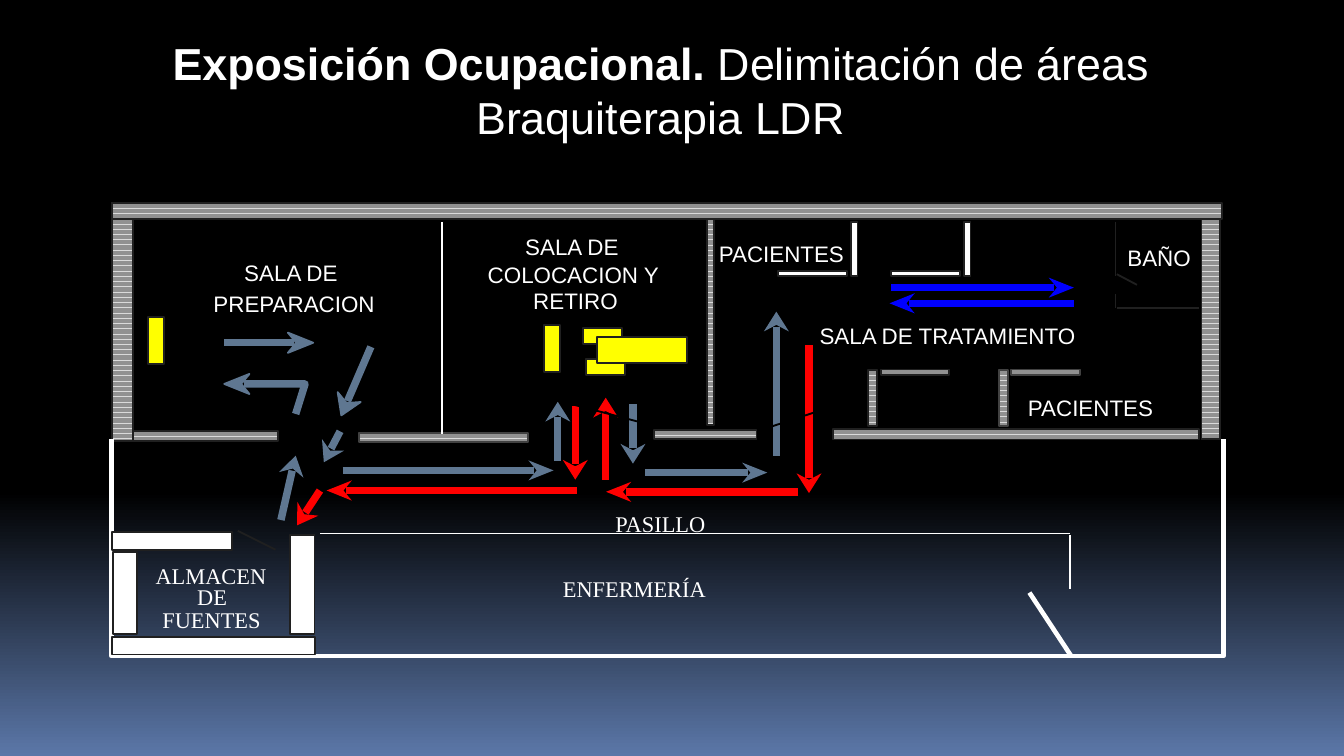
import dataclasses
import math

import pptx
import pptx.dml.color
import pptx.enum.dml
import pptx.enum.shapes
import pptx.enum.text
import pptx.oxml
import pptx.util

Pt = pptx.util.Pt


@dataclasses.dataclass(frozen=True)
class Theme:
    white: str = "FFFFFF"
    black: str = "000000"
    edge: str = "202020"
    rim: str = "414141"
    light: str = "DADADA"
    mid: str = "919191"
    steel: str = "5F7791"
    blue: str = "0000FF"
    red: str = "FF0000"
    yellow: str = "FFFF00"
    sky: str = "5B77A8"
    sans: str = "Arial"
    serif: str = "Times New Roman"
    title: int = 24
    label: int = 12
    thin: float = 1
    bold: float = 2.5
    route: float = 4


@dataclasses.dataclass(frozen=True)
class Box:
    x: float
    y: float
    w: float
    h: float

    def at(self, x, y):
        return Pt(self.x + x), Pt(self.y + y)


T = Theme()


def rgb(code):
    return pptx.dml.color.RGBColor.from_string(code)


def stroke(shape, color, width):
    shape.line.color.rgb = rgb(color)
    shape.line.width = Pt(width)


def block(slide, box, part, fill=None, edge=T.edge):
    """Draw a rectangle; without a fill colour it is a hatched wall."""
    x, y, w, h = part
    shape = slide.shapes.add_shape(
        pptx.enum.shapes.MSO_SHAPE.RECTANGLE, *box.at(x, y), Pt(w), Pt(h))
    shape.shadow.inherit = False
    if fill:
        shape.fill.solid()
        shape.fill.fore_color.rgb = rgb(fill)
    else:
        shape.fill.patterned()
        shape.fill.pattern = pptx.enum.dml.MSO_PATTERN.HORIZONTAL
        shape.fill.fore_color.rgb = rgb(T.light)
        shape.fill.back_color.rgb = rgb(T.mid)
    stroke(shape, edge, T.thin)


def line(slide, box, start, end, color, width=T.thin):
    link = slide.shapes.add_connector(
        pptx.enum.shapes.MSO_CONNECTOR.STRAIGHT, *box.at(*start), *box.at(*end))
    stroke(link, color, width)
    link._element.spPr.append(pptx.oxml.parse_xml(
        '<a:effectLst xmlns:a="http://schemas.openxmlformats.org/drawingml/2006/main"/>'))


def path(slide, box, points, close=False):
    pen = slide.shapes.build_freeform(*box.at(*points[0]))
    pen.add_line_segments([box.at(*p) for p in points[1:]], close=close)
    shape = pen.convert_to_shape()
    shape.shadow.inherit = False
    shape.fill.background()
    return shape


def arrow(slide, box, points, color, rim=False):
    """Draw a shaft through the points and a barbed head at the last one."""
    (ax, ay), (bx, by) = points[-2:]
    span = math.hypot(bx - ax, by - ay)
    ux, uy = (bx - ax) / span, (by - ay) / span
    size, half = (13.5, 5.4) if abs(ux) > abs(uy) else (10.6, 6.7)

    def spot(back, side):
        return bx - back * ux - side * uy, by - back * uy + side * ux

    shaft = [*points[:-1], spot(0.78 * size, 0)]
    if len(shaft) == 2:
        line(slide, box, *shaft, color, T.route)
    else:
        stroke(path(slide, box, shaft), color, T.route)
    barb = [spot(size, half), (bx, by), spot(size, -half), spot(0.67 * size, 0)]
    head = path(slide, box, barb, close=True)
    head.fill.solid()
    head.fill.fore_color.rgb = rgb(color)
    if rim:
        stroke(head, color, T.thin)
    else:
        head.line.fill.background()


def text(slide, box, runs, font, size, wrap=False):
    shape = slide.shapes.add_textbox(*box.at(0, 0), Pt(box.w), Pt(box.h))
    frame = shape.text_frame
    frame.word_wrap = wrap
    frame.auto_size = pptx.enum.text.MSO_AUTO_SIZE.SHAPE_TO_FIT_TEXT
    para = frame.paragraphs[0]
    for words, bold in runs:
        run = para.add_run()
        run.text = words
        run.font.name, run.font.size, run.font.bold = font, Pt(size), bold
        run.font.color.rgb = rgb(T.white)
    return frame


def title(slide, box):
    runs = [("Exposición Ocupacional.", True),
            (" Delimitación de áreas Braquiterapia LDR", False)]
    frame = text(slide, box, runs, T.sans, T.title, wrap=True)
    frame.vertical_anchor = pptx.enum.text.MSO_ANCHOR.MIDDLE
    frame.paragraphs[0].alignment = pptx.enum.text.PP_ALIGN.CENTER


def walls(slide, box):
    for part in [(7.7, 123.1, 81.4, 5), (0, 0.7, 11.5, 127.4),
                 (583.7, 0.7, 10.1, 126.7), (318.7, 0.7, 3.6, 118.8),
                 (0, 0.7, box.w - 1.3, 8.6), (386.4, 121.7, 195.8, 5.8),
                 (290.6, 122.4, 54.7, 5)]:
        block(slide, box, part)
    block(slide, box, (132.2, 123.8, 90.7, 5), edge=T.rim)
    for x, edge in [(405.1, T.edge), (475, T.rim)]:
        block(slide, box, (x, 90, 5, 30.2), edge=edge)
        block(slide, box, (x + 6.8, 90, 36.7, 2.9), edge=edge)
    for x in (356.9, 417.4):
        block(slide, box, (x + 38.9, 11, 3.6, 29), T.white)
        block(slide, box, (x, 37, 36.7, 2.9), T.white)
    line(slide, box, (176.9, 10.8), (176.9, 124.6), T.white)
    for start, end in [((582.2, 56.9), (538.3, 56.9)), ((537.6, 10.8), (537.6, 39.6)),
                       ((537.6, 56.9), (537.6, 49.7)), ((538.3, 38.9), (549.1, 44.6))]:
        line(slide, box, start, end, T.edge)


def hall(slide, box):
    """Draw the corridor outline, the source store and the nursing room."""
    right, low = box.w - 0.6, box.h - 0.5
    outline = path(slide, box, [(-0.3, 127.4), (-0.3, low), (right, low), (right, 127.4)])
    stroke(outline, T.white, T.bold)
    for part in [(0, 233.3, 108.7, 9.4), (0.5, 187.9, 13, 43.9),
                 (95.5, 178.6, 13, 53.3), (0, 177.1, 64.1, 9.4)]:
        block(slide, box, part, T.white)
    line(slide, box, (111.4, 177.8), (513.1, 177.8), T.white)
    line(slide, box, (513.1, 178.6), (513.1, 207.4), T.white)
    line(slide, box, (67.4, 176.4), (87.6, 186.5), T.edge)


def labels(slide, box):
    rooms = {
        T.serif: [("ALMACEN", 16.3, 189.4, 77), ("DE", 38.6, 200.9, 31),
                  ("FUENTES", 19.9, 213.1, 68), ("PASILLO", 262.6, 162, 64),
                  ("ENFERMERÍA", 234.5, 196.6, 92)],
        T.sans: [("SALA DE", 63.8, 27.2, 66), ("PREPARACION", 47.3, 43.9, 102),
                 ("SALA DE", 214.3, 13.5, 66), ("COLOCACION Y", 194.2, 28.6, 108),
                 ("RETIRO", 218.6, 42.5, 61), ("PACIENTES", 318, 17.3, 82),
                 ("PACIENTES", 483.6, 99.4, 82), ("BAÑO", 536.9, 19.4, 49),
                 ("SALA DE TRATAMIENTO", 372, 61.2, 153)],
    }
    for font, items in rooms.items():
        for words, x, y, w in items:
            spot = Box(box.x + x, box.y + y, w, 21.6)
            text(slide, spot, [(words, False)], font, T.label)


def tables(slide, box):
    for part in [(253.9, 84.2, 20.9, 8.6), (252.5, 67.7, 20.9, 8.6),
                 (259.7, 72.7, 48.2, 13.7), (231.6, 66.2, 8.6, 25.2),
                 (19.2, 61.9, 8.6, 25.2)]:
        block(slide, box, part, T.yellow)


def routes(slide, box):
    for points in [[(98.4, 113.8), (103.4, 97.7), (60.2, 97.7)],
                   [(60.2, 75.6), (107.8, 75.6)], [(138.7, 77.8), (122.9, 114.5)]]:
        arrow(slide, box, points, T.steel, rim=True)
    trips = {
        T.steel: [(90.5, 170.6, 98.4, 136.1), (122.2, 123.1, 113.5, 139.7),
                  (123.6, 144, 236.6, 144), (238.8, 139, 238.8, 107.3),
                  (279.1, 108.7, 279.1, 140.4), (285.6, 145.2, 351.1, 145.2),
                  (355.9, 136.1, 355.9, 59)],
        T.blue: [(417.4, 46.1, 515.3, 46.1), (515.3, 54.5, 416.6, 54.5)],
        T.red: [(373.4, 77, 373.4, 156.2), (367.7, 155.5, 264.7, 155.5),
                (264.5, 149, 264.5, 105.1), (248.2, 109.4, 248.2, 149),
                (248.9, 154.8, 115, 154.8), (111.4, 154.8, 99.1, 173.5)],
    }
    for color, items in trips.items():
        for ax, ay, bx, by in items:
            arrow(slide, box, [(ax, ay), (bx, by)], color)


def doors(slide, box):
    for start, end in [((92.6, 128.9), (127.9, 116.6)), ((290.6, 120.2), (235.9, 105.8)),
                       ((349.7, 121.7), (389.3, 108.7))]:
        line(slide, box, start, end, T.black)
    line(slide, box, (513.8, 243.4), (491.5, 209.5), T.white, T.bold)


def ground(slide):
    fill = slide.background.fill
    fill.gradient()
    fill.gradient_angle = 270
    for stop, (color, place) in zip(fill.gradient_stops, [(T.black, 0.65), (T.sky, 1)]):
        stop.color.rgb = rgb(color)
        stop.position = place


def main():
    deck = pptx.Presentation()
    deck.slide_width, deck.slide_height = Pt(720), Pt(405)
    slide = deck.slides.add_slide(deck.slide_layouts[6])
    ground(slide)
    title(slide, Box(19.4, 15.8, 668.9, 64.8))
    plan = Box(60, 108, 596, 244)
    for draw in (walls, hall, labels, tables, routes, doors):
        draw(slide, plan)
    deck.save("out.pptx")


if __name__ == "__main__":
    main()
